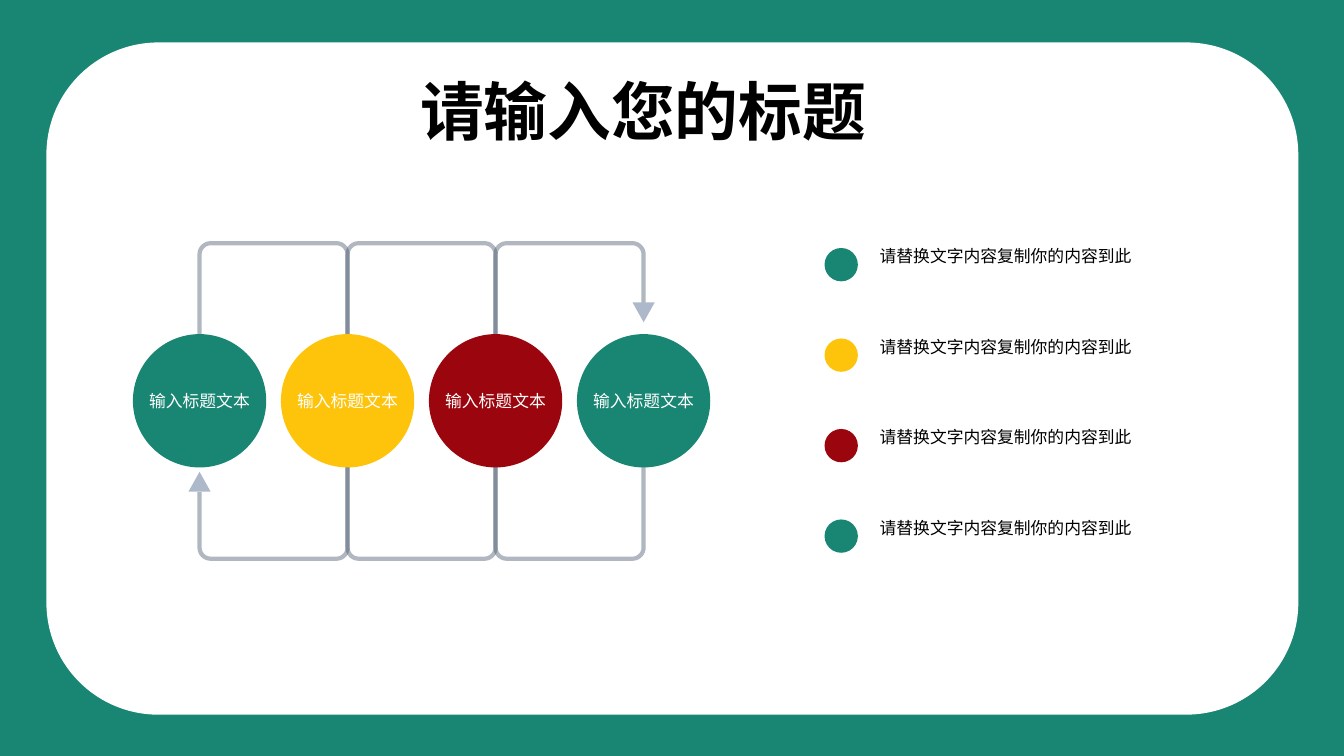
"""Build a slide with four linked circles and a four-line colour key."""
import math
import pptx
import pptx.util
import pptx.dml.color
import pptx.enum.shapes
import pptx.enum.text
import pptx.oxml
import pptx.oxml.ns

Cm, Pt = pptx.util.Cm, pptx.util.Pt
KIND = pptx.enum.shapes.MSO_SHAPE
ALIGN = pptx.enum.text.PP_ALIGN
ANCHOR = pptx.enum.text.MSO_ANCHOR
GREEN, GOLD, RED, WHITE, BLACK = "198673", "FEC40C", "9B050E", "FFFFFF", "000000"


def paint(fill, color):
    """Give a fill one solid colour."""
    fill.solid()
    fill.fore_color.rgb = pptx.dml.color.RGBColor.from_string(color)


def write(shape, text, color, frame_set, para_set, font_set):
    """Put one formatted line of text in a shape."""
    frame = shape.text_frame
    para = frame.paragraphs[0]
    run = para.add_run()
    run.text = text
    base = dict.fromkeys(("margin_left", "margin_right", "margin_top", "margin_bottom"), 0)
    for item, values in ((frame, base | frame_set), (para, para_set), (run.font, font_set)):
        for name, value in values.items():
            setattr(item, name, value)
    paint(run.font.fill, color)


deck = pptx.Presentation()
deck.slide_width, deck.slide_height = Cm(33.87), Cm(19.05)
slide = deck.slides.add_slide(deck.slide_layouts[6])
paint(slide.background.fill, GREEN)
shapes = slide.shapes

panel = shapes.add_shape(KIND.ROUNDED_RECTANGLE, Cm(1.17), Cm(1.07), Cm(31.55), Cm(16.94))
panel.shadow.inherit = False
paint(panel.fill, WHITE)
panel.line.fill.background()

first, step, mid = 5.03, 3.73, 10.1
top, low, bend = 6.13, 14.08, 0.28
last = first + 3 * step

loops = [
    (1, 0, [], []),
    (0, 0, [(first, 10)], [(first, 12.4)]),
    (2, 2, [(last, 10.1)], [(last, 7.8)]),
]
for col, shift, head, tail in loops:
    left = first + col * step
    right = left + step
    corners = [
        (left + bend, top + bend, 180), (right - bend, top + bend, 270),
        (right - bend, low - bend, 0), (left + bend, low - bend, 90),
    ]
    points = list(head)
    for x, y, start in corners[shift:] + corners[:shift]:
        for turn in range(0, 91, 10):
            angle = math.radians(start + turn)
            points.append((x + bend * math.cos(angle), y + bend * math.sin(angle)))
    points = [(Cm(x), Cm(y)) for x, y in points + tail]
    route = shapes.build_freeform(*points[0])
    route.add_line_segments(points[1:], close=not head)
    loop = route.convert_to_shape()
    loop.shadow.inherit = False
    loop.fill.background()
    loop.line.width = Pt(3)
    paint(loop.line.fill, "44546A")
    tint = loop.line.fill._xPr.find(".//" + pptx.oxml.ns.qn("a:srgbClr"))
    tint.append(pptx.oxml.parse_xml(
        f'<a:alpha {pptx.oxml.ns.nsdecls("a")} val="42000"/>'))

for x, y, turn in ((first, 11.89, 0), (last, 7.62, 180)):
    arrow = shapes.add_shape(KIND.ISOSCELES_TRIANGLE, Cm(x - 0.28), Cm(y), Cm(0.56), Cm(0.5))
    arrow.rotation = turn
    arrow.shadow.inherit = False
    paint(arrow.fill, "ADB9CA")
    arrow.line.fill.background()

small = {"size": Pt(12), "name": "Arial"}
size, dot = 3.36, 0.84
for row, color in enumerate((GREEN, GOLD, RED, GREEN)):
    x = first + row * step - size / 2
    y = 6.25 + row * 2.28
    disc = shapes.add_shape(KIND.OVAL, Cm(x), Cm(mid - size / 2), Cm(size), Cm(size))
    spot = shapes.add_shape(KIND.OVAL, Cm(20.78), Cm(y), Cm(dot), Cm(dot))
    for oval in (disc, spot):
        oval.shadow.inherit = False
        paint(oval.fill, color)
        oval.line.fill.background()
    write(disc, "输入标题文本", WHITE, {"word_wrap": False, "vertical_anchor": ANCHOR.MIDDLE},
          {"alignment": ALIGN.CENTER}, small)
    note = shapes.add_textbox(Cm(22.17), Cm(y - 0.15), Cm(8.31), Cm(1.22))
    write(note, "请替换文字内容复制你的内容到此", BLACK, {"word_wrap": True},
          {"line_spacing": 1.2}, small)

title = shapes.add_textbox(Cm(10.59), Cm(1.8), Cm(11.56), Cm(1.96))
write(title, "请输入您的标题", BLACK, {"word_wrap": True}, {},
      {"size": Pt(45.5), "name": "Noto Sans CJK JP", "bold": True})

deck.save("out.pptx")
